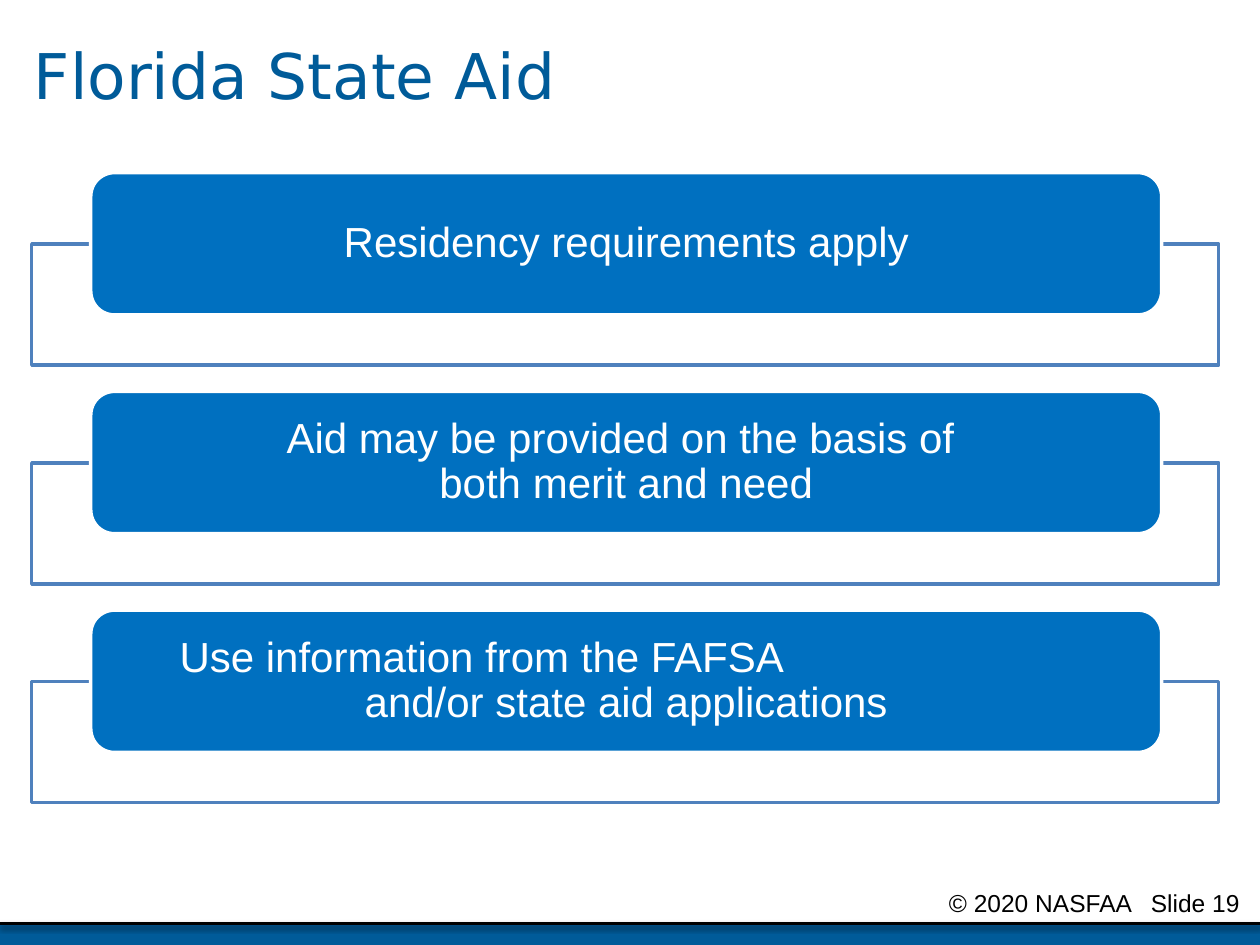
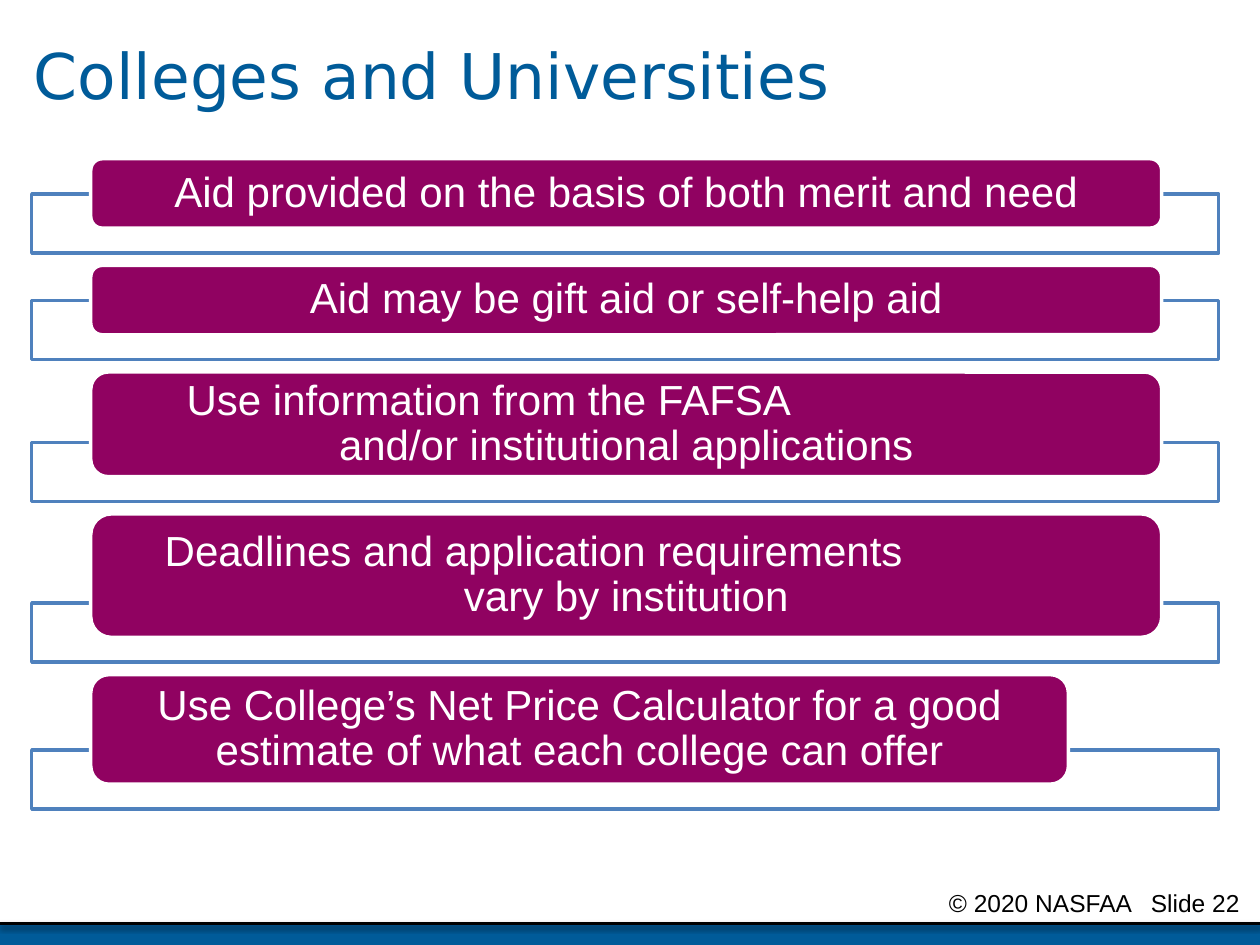
"""Build two financial aid slides made of stacked, framed statement boxes."""
from dataclasses import dataclass

from lxml.etree import SubElement
from pptx import Presentation
from pptx.dml.color import RGBColor
from pptx.enum.shapes import MSO_CONNECTOR, MSO_SHAPE
from pptx.enum.text import MSO_ANCHOR, PP_ALIGN
from pptx.oxml.ns import qn
from pptx.shapes.autoshape import Shape
from pptx.slide import Slide
from pptx.text.text import TextFrame, _Paragraph
from pptx.util import Cm, Pt

WHITE = RGBColor(0xFF, 0xFF, 0xFF)
BLACK = RGBColor(0x00, 0x00, 0x00)
NAVY = RGBColor(0x00, 0x5B, 0x99)
BLUE = RGBColor(0x00, 0x70, 0xC0)
PLUM = RGBColor(0x90, 0x02, 0x61)
FRAME_BLUE = RGBColor(0x4F, 0x81, 0xBD)

BODY_FONT = "Arial"
TITLE_FONT = "DejaVu Sans"
SLIDE_W, SLIDE_H = 25.4, 19.05
BAND_TOP = 18.62
FOOTER_LEFT, FOOTER_TAB = 19.13, 4.07
FRAME_LEFT, FRAME_W = 0.64, 23.93
BOX_LEFT, BOX_W = 1.83, 21.59
BOX_INSET = 0.64


@dataclass(frozen=True)
class Statement:
    """A box's text and size; a lead indent sets its first line flush left."""

    text: str
    height: float
    lead_indent: float = 0
    width: float = BOX_W


@dataclass(frozen=True)
class Stack:
    """A slide's title, number and column of statements, with its spacing."""

    title: str
    number: int
    color: RGBColor
    top: float
    overlap: float
    frame_height: float
    gap: float
    statements: tuple[Statement, ...]


STACKS = (
    Stack("Florida State Aid", 19, BLUE, 3.48, 1.43, 2.44, 0.53, (
        Statement("Residency requirements apply", 2.87),
        Statement("Aid may be provided on the basis of \vboth merit and need", 2.87),
        Statement("Use information from the FAFSA\nand/or state aid applications", 2.87, 1.01),
    )),
    Stack("Colleges and Universities", 22, PLUM, 3.2, 0.69, 1.19, 0.25, (
        Statement("Aid provided on the basis of both merit and need", 1.4),
        Statement("Aid may be gift aid or self-help aid", 1.4),
        Statement("Use information from the FAFSA\nand/or institutional applications", 2.11, 1.19),
        Statement("Deadlines and application requirements\nvary by institution", 2.49, 0.73),
        Statement("Use College’s Net Price Calculator for a good estimate "
                  "of what each college can offer", 2.21, width=19.71),
    )),
)


def format_runs(p: _Paragraph, font: str, size: float, color: RGBColor) -> None:
    """Give every run of a paragraph one font, size and colour."""
    for r in p.runs:
        r.font.name = font
        r.font.size = Pt(size)
        r.font.color.rgb = color


def set_insets(tf: TextFrame, side: float, vertical: float) -> None:
    """Set the inner margins of a text frame in centimetres."""
    tf.margin_left = tf.margin_right = Cm(side)
    tf.margin_top = tf.margin_bottom = Cm(vertical)


def add_panel(s: Slide, kind: MSO_SHAPE, left: float, top: float, width: float,
              height: float, fill: RGBColor, line: RGBColor | None = None) -> Shape:
    """Add a flat filled shape, outlined when a line colour is given."""
    sp = s.shapes.add_shape(kind, Cm(left), Cm(top), Cm(width), Cm(height))
    sp.shadow.inherit = False
    sp.fill.solid()
    sp.fill.fore_color.rgb = fill
    if line is None:
        sp.line.fill.background()
    else:
        sp.line.color.rgb = line
        sp.line.width = Pt(2)
    return sp


def set_alpha(sp: Shape, percent: int) -> None:
    """Set the opacity of a shape's solid fill."""
    color = sp._element.spPr.find(qn("a:solidFill"))[0]
    SubElement(color, qn("a:alpha")).set("val", str(percent * 1000))


def add_title(s: Slide, text: str) -> None:
    """Place and format the slide title."""
    sp = s.shapes.title
    sp.left, sp.top, sp.width, sp.height = Cm(0.43), Cm(0), Cm(24.56), Cm(3.18)
    tf = sp.text_frame
    tf.text = text
    tf.vertical_anchor = MSO_ANCHOR.MIDDLE
    p = tf.paragraphs[0]
    p.alignment = PP_ALIGN.LEFT
    p.line_spacing = 0.9
    format_runs(p, TITLE_FONT, 36, NAVY)


def add_footer(s: Slide, number: int) -> None:
    """Draw the bottom band, its shadowed rule and the footer text."""
    add_panel(s, MSO_SHAPE.RECTANGLE, 0, BAND_TOP, SLIDE_W, SLIDE_H - BAND_TOP, NAVY)
    rule = s.shapes.add_connector(MSO_CONNECTOR.STRAIGHT, Cm(0), Cm(BAND_TOP),
                                  Cm(SLIDE_W), Cm(BAND_TOP))
    rule.line.color.rgb = BLACK
    rule.line.width = Pt(2)
    effects = SubElement(rule._element.spPr, qn("a:effectLst"))
    shadow = SubElement(effects, qn("a:outerShdw"), blurRad=str(Pt(3.1)),
                        dist=str(Pt(1.6)), dir="5400000", rotWithShape="0")
    color = SubElement(shadow, qn("a:srgbClr"), val=str(BLACK))
    SubElement(color, qn("a:alpha"), val="38000")

    sp = s.shapes.add_textbox(Cm(FOOTER_LEFT), Cm(17.78),
                              Cm(SLIDE_W - FOOTER_LEFT), Cm(0.64))
    tf = sp.text_frame
    tf.word_wrap = True
    set_insets(tf, 0, 0.13)
    p = tf.paragraphs[0]
    tabs = SubElement(p._p.get_or_add_pPr(), qn("a:tabLst"))
    SubElement(tabs, qn("a:tab"), pos=str(Cm(FOOTER_TAB)), algn="l")
    p.text = f"© 2020 NASFAA\tSlide {number}"
    format_runs(p, BODY_FONT, 14, BLACK)


def add_statement(s: Slide, stack: Stack, statement: Statement, top: float) -> float:
    """Draw a frame with its statement box and return the frame's bottom."""
    frame_top = top + statement.height - stack.overlap
    frame = add_panel(s, MSO_SHAPE.RECTANGLE, FRAME_LEFT, frame_top, FRAME_W,
                      stack.frame_height, WHITE, FRAME_BLUE)
    set_alpha(frame, 90)
    box = add_panel(s, MSO_SHAPE.ROUNDED_RECTANGLE, BOX_LEFT, top, statement.width,
                    statement.height, stack.color, WHITE)
    tf = box.text_frame
    tf.text = statement.text
    tf.word_wrap = True
    tf.vertical_anchor = MSO_ANCHOR.MIDDLE
    set_insets(tf, BOX_INSET, 0)
    for p in tf.paragraphs:
        p.alignment = PP_ALIGN.CENTER
        p.line_spacing = 0.9
        format_runs(p, BODY_FONT, 24, WHITE)
    if statement.lead_indent:
        lead = tf.paragraphs[0]
        lead.alignment = PP_ALIGN.LEFT
        lead._p.get_or_add_pPr().set("marL", str(Cm(statement.lead_indent)))
    return frame_top + stack.frame_height


def build_slide(prs: Presentation, stack: Stack) -> None:
    """Add one slide with its title, footer and stacked statements."""
    s = prs.slides.add_slide(prs.slide_layouts[5])
    add_footer(s, stack.number)
    add_title(s, stack.title)
    top = stack.top
    for statement in stack.statements:
        top = add_statement(s, stack, statement, top) + stack.gap


def main() -> None:
    """Build and save the presentation."""
    prs = Presentation()
    prs.slide_width, prs.slide_height = Cm(SLIDE_W), Cm(SLIDE_H)
    for stack in STACKS:
        build_slide(prs, stack)
    prs.save("out.pptx")


if __name__ == "__main__":
    main()
